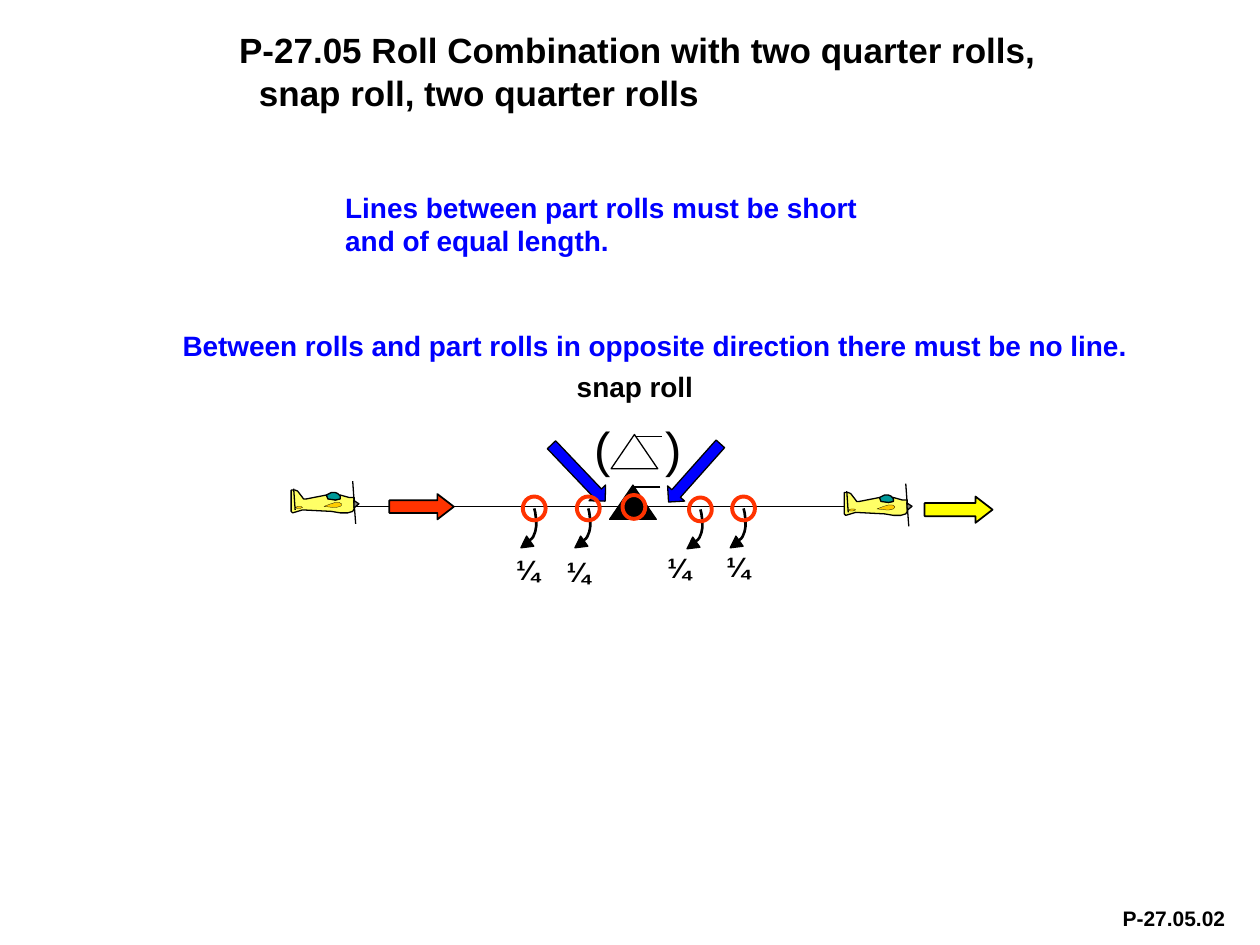
from dataclasses import dataclass
from lxml.etree import SubElement as Sub
from pptx import Presentation
from pptx.dml.color import RGBColor as Rgb
from pptx.enum.shapes import MSO_CONNECTOR as Link, MSO_SHAPE as Kind
from pptx.enum.text import PP_ALIGN as Align
from pptx.oxml.ns import qn
from pptx.util import Cm, Pt


@dataclass(frozen=True)
class Theme:
    font: str = "Arial"
    black: str = "000000"
    white: str = "FFFFFF"
    blue: str = "0000FF"
    red: str = "FF3300"
    yellow: str = "FFFF00"
    body: str = "FFFF66"
    glass: str = "009999"
    gold: str = "FFCC00"
    gray: str = "808080"
    title: int = 20
    text: int = 16
    code: int = 12
    paren: int = 28
    hair: float = 0.13
    thin: float = 0.75
    base: float = 1
    curve: float = 1.5
    ring: float = 2.25


T = Theme()

HULL = [(99, 28), (117, 33), (127, 33), (127, 56), (124, 61), (114, 64),
        (99, 64), (81, 61), (23, 58), (13, 61), (3, 64), (0, 61), (0, 18),
        (8, 18), (13, 20), (23, 33), (25, 36), (30, 36), (71, 28), (74, 33),
        (89, 38), (97, 36)]
GLASS = [(71, 28), (74, 36), (89, 38), (99, 36), (99, 30), (94, 25),
         (89, 23), (81, 23)]
WING = [(66, 51), (79, 46), (89, 43), (97, 43), (102, 46), (102, 48),
        (99, 51), (91, 53), (84, 53)]
TAIL = [(8, 53), (14, 51), (20, 51), (23, 53), (18, 55), (12, 55)]
BEND = [(0, 0), (8, 33), (5, 56), (-13, 67)]
ROLLS = [(10.54, 10.01, 10.64, 11.02), (11.63, 10.01, 11.66, 11.05),
         (13.89, 10.03, 13.69, 10.97), (14.76, 10.01, 14.88, 10.95)]


def paint(shape, fill, line, width):
    shape.shadow.inherit = False
    if fill:
        shape.fill.solid()
        shape.fill.fore_color.rgb = Rgb.from_string(fill)
    else:
        shape.fill.background()
    shape.line.color.rgb = Rgb.from_string(line)
    shape.line.width = Pt(width)


def form(slide, kind, box, fill, line=T.black, width=T.thin, turn=0):
    shape = slide.shapes.add_shape(kind, *map(Cm, box))
    paint(shape, fill, line, width)
    shape.rotation = turn
    return shape


def rule(slide, x1, y1, x2, y2, width=T.thin):
    line = slide.shapes.add_connector(Link.STRAIGHT, *map(Cm, (x1, y1, x2, y2)))
    line.line.color.rgb = Rgb.from_string(T.black)
    line.line.width = Pt(width)
    Sub(line._element.spPr, qn("a:effectLst"))


def trace(slide, x, y, dots, fill, width, close=True):
    pen = slide.shapes.build_freeform(*dots[0], scale=Cm(0.01))
    pen.add_line_segments(dots[1:], close=close)
    paint(pen.convert_to_shape(Cm(x), Cm(y)), fill, T.black, width)


def label(slide, box, lines, size, color=T.black, bold=True, align=Align.LEFT):
    frame = slide.shapes.add_textbox(*map(Cm, box)).text_frame
    frame.word_wrap = True
    para = frame.paragraphs[0]
    para.alignment = align
    for i, line in enumerate(lines):
        if i:
            para.add_line_break()
        run = para.add_run()
        run.text = line
        font = run.font
        font.name, font.size, font.bold = T.font, Pt(size), bold
        font.color.rgb = Rgb.from_string(color)
    return para


def heading(slide, box):
    para = label(slide, box, ["P-27.05 Roll Combination with two quarter rolls, "
                              "snap roll, two quarter rolls"], T.title)
    props = para._p.get_or_add_pPr()
    props.set("marL", str(Cm(0.4)))
    props.set("indent", str(-Cm(0.4)))


def plane(slide, x, y):
    rule(slide, x + 1.3, y + 0.86, x + 1.27, y + 0.46)
    for dots, fill, width in ((HULL, T.body, T.thin), (GLASS, T.glass, T.thin),
                              (WING, T.gold, T.hair), (TAIL, T.gold, T.hair)):
        trace(slide, x, y, dots, fill, width)
    rule(slide, x + 0.08, y + 0.58, x + 0.05, y + 0.15)
    form(slide, Kind.ISOSCELES_TRIANGLE, (x + 1.24, y + 0.41, 0.15, 0.1),
         T.gray, turn=87)
    rule(slide, x + 1.27, y + 0.43, x + 1.24, y)


def curve(ends, steps=12):
    dots = []
    for i in range(steps + 1):
        t = i / steps
        parts = ((1 - t) ** 3, 3 * t * (1 - t) ** 2, 3 * t * t * (1 - t), t ** 3)
        dots.append(tuple(round(sum(p * e[k] for p, e in zip(parts, ends)))
                          for k in (0, 1)))
    return dots


def turn(slide, x, y, mid, top):
    x, y = x + 0.23, y + 0.24
    trace(slide, x, y, curve(BEND), None, T.curve, close=False)
    form(slide, Kind.ISOSCELES_TRIANGLE, (x - 0.3, y + 0.61, 0.25, 0.23),
         T.black, turn=234.5)
    label(slide, (mid - 1.61, top, 3.22, 0.94), ["¼"], T.text, align=Align.CENTER)


def ring(slide, x, y):
    form(slide, Kind.OVAL, (x, y, 0.46, 0.48), None, T.red, T.ring)


def snap(slide, x, y, fill):
    form(slide, Kind.ISOSCELES_TRIANGLE, (x, y, 0.94, 0.69), fill)
    rule(slide, x + 1.02, y + 0.04, x + 0.48, y + 0.04)


def arrow(slide, box, fill):
    shape = form(slide, Kind.RIGHT_ARROW, box, fill, width=T.base)
    shape.adjustments[1] = 0.65


def parens(slide, box):
    para = label(slide, box, ["(\t)"], T.paren, bold=False)
    tabs = Sub(para._p.get_or_add_pPr(), qn("a:tabLst"))
    Sub(tabs, qn("a:tab"), pos=str(Cm(1.43)), algn="l")


def figure(slide):
    rule(slide, 18.08, 10.21, 6.07, 10.21, T.base)
    plane(slide, 17.02, 9.75)
    arrow(slide, (7.85, 9.96, 1.3, 0.51), T.red)
    plane(slide, 5.87, 9.7)
    for roll in ROLLS:
        turn(slide, *roll)
    arrow(slide, (18.64, 10.01, 1.37, 0.53), T.yellow)
    snap(slide, 12.29, 9.78, T.black)
    snap(slide, 12.32, 8.76, T.white)
    parens(slide, (11.73, 8.31, 3.56, 1.45))
    label(slide, (10.21, 7.32, 5.18, 0.94), ["snap roll"], T.text,
          align=Align.CENTER)
    for x, tilt in ((13.77, 41.7), (11.43, 316.4)):
        form(slide, Kind.DOWN_ARROW, (x, 8.75, 0.46, 1.57), T.blue, turn=tilt)
    for x, y, *_ in ROLLS:
        ring(slide, x, y)
    ring(slide, 12.55, 9.98)


def notes(slide):
    label(slide, (3.43, 6.5, 19.79, 0.94),
          ["Between rolls and part rolls in opposite direction "
           "there must be no line."], T.text, T.blue)
    label(slide, (6.71, 3.71, 11.53, 1.63),
          ["Lines between part rolls must be short", "and of equal length."],
          T.text, T.blue)


def main():
    deck = Presentation()
    deck.slide_width, deck.slide_height = Cm(25.4), Cm(19.05)
    slide = deck.slides.add_slide(deck.slide_layouts[6])
    label(slide, (22.38, 18.14, 2.62, 0.76), ["P-27.05.02"], T.code)
    heading(slide, (4.57, 0.46, 17.25, 1.93))
    figure(slide)
    notes(slide)
    deck.save("out.pptx")


if __name__ == "__main__":
    main()
